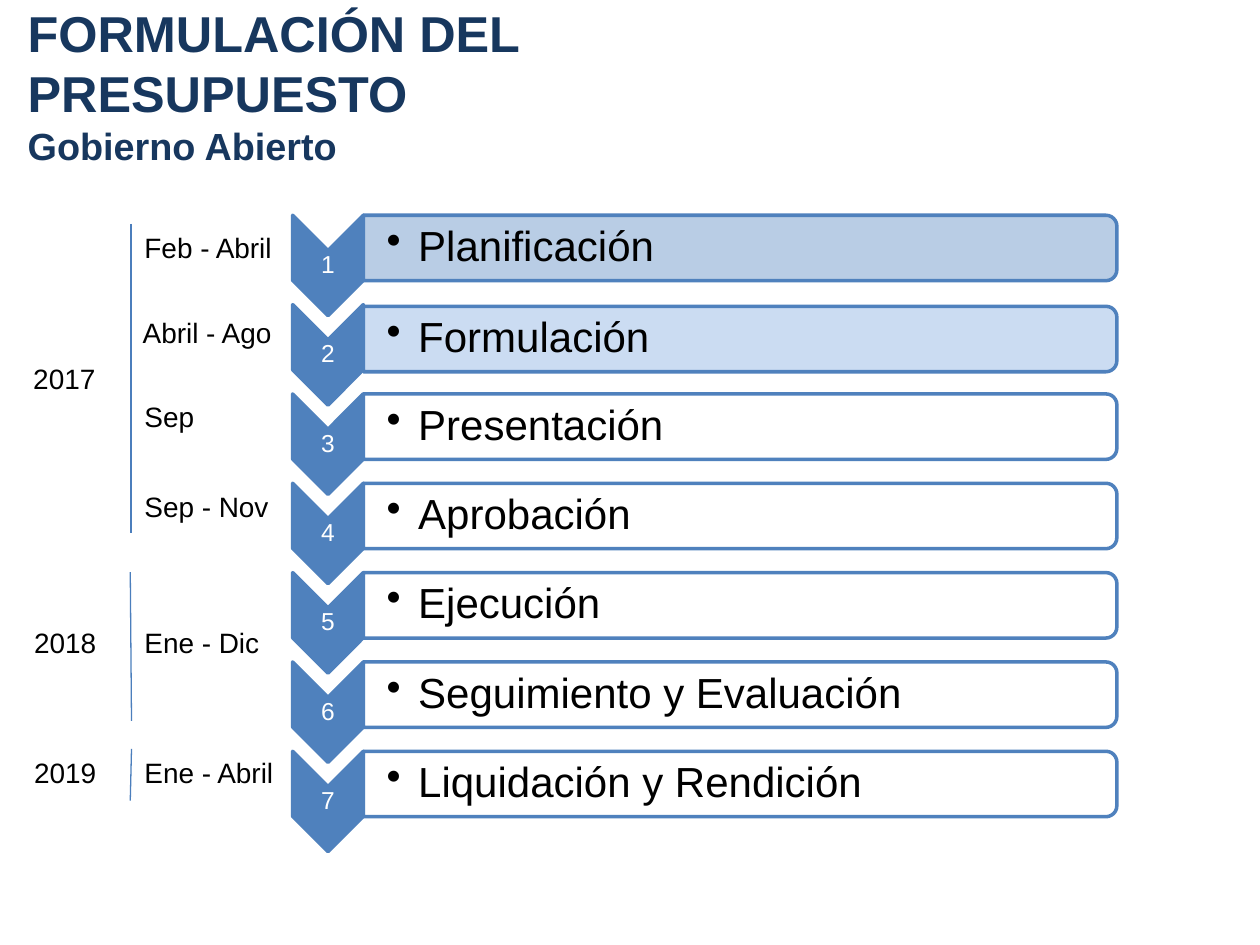
import dataclasses

import pptx
import pptx.dml.color
import pptx.enum.shapes
import pptx.enum.text
import pptx.oxml.ns
import pptx.util
from lxml import etree

Pt = pptx.util.Pt
Rgb = pptx.dml.color.RGBColor.from_string
Kind = pptx.enum.shapes.MSO_SHAPE
Align = pptx.enum.text.PP_ALIGN
Mid = pptx.enum.text.MSO_ANCHOR.MIDDLE
Fit = pptx.enum.text.MSO_AUTO_SIZE
qn = pptx.oxml.ns.qn


@dataclasses.dataclass(frozen=True)
class Theme:
    """Colours and type sizes of the slide."""
    font: str = "Arial"
    navy: str = "17375E"
    blue: str = "4F81BD"
    rule: str = "4B7EBC"
    plan: str = "B9CDE5"
    form: str = "C6D9F1"
    white: str = "FFFFFF"
    black: str = "000000"
    head: float = 28.8
    sub: float = 21.6
    step: float = 24
    label: float = 16
    mark: float = 14


T = Theme()

STEPS = [
    ("Planificación", T.plan, 100, 0),
    ("Formulación", T.form, 90, 1),
    ("Presentación", T.white, 90, 0),
    ("Aprobación", T.white, 90, 0),
    ("Ejecución", T.white, 90, 0),
    ("Seguimiento y Evaluación", T.white, 90, 0),
    ("Liquidación y Rendición", T.white, 90, 0),
]

YEARS = [
    ("2017", (3, 128, 169, 176.5), 75, 0,
     [("Feb - Abril", 0, 0), ("Abril - Ago", -1, 49), ("Sep", 0, 97), ("Sep - Nov", 0, 148)]),
    ("2018", (3.5, 327, 168.5, 85), 27, 0.7, [("Ene - Dic", 0, 27)]),
    ("2019", (3.5, 428, 168.5, 29.5), 0, -0.7, [("Ene - Abril", 0, 0)]),
]


def put(obj, **fmt):
    """Set each format value on the object."""
    for key, val in fmt.items():
        setattr(obj, key, val)


def style(font, size, ink, bold=False):
    """Give a font its face, size and colour."""
    put(font, name=T.font, size=Pt(size), bold=bold)
    font.color.rgb = Rgb(ink)


def write(slide, box, text, size, ink, pads=None, bullet=False, **fmt):
    """Place one paragraph in a text box."""
    frame = slide.shapes.add_textbox(*map(Pt, box)).text_frame
    frame.word_wrap = True
    if pads:
        left, rest = pads
        put(frame, vertical_anchor=Mid, auto_size=Fit.NONE, margin_left=Pt(left),
            margin_top=Pt(rest), margin_right=Pt(rest), margin_bottom=Pt(rest))
    para = frame.paragraphs[0]
    para.text = text
    put(para, **fmt)
    if bullet:
        props = para._p.get_or_add_pPr()
        put_attr = {"marL": Pt(18), "indent": Pt(-18)}
        for key, val in put_attr.items():
            props.set(key, str(val))
        etree.SubElement(props, qn("a:buChar"), char="•")
    style(para.runs[0].font, size, ink)


def turn(slide, kind, box, fill, alpha=100):
    """Draw a preset turned a quarter so that it covers the box."""
    x, y, w, h = box
    shape = slide.shapes.add_shape(
        kind, Pt(x + (w - h) / 2), Pt(y + (h - w) / 2), Pt(h), Pt(w))
    shape.rotation = 90
    shape.shadow.inherit = False
    shape.fill.solid()
    shape.fill.fore_color.rgb = Rgb(fill)
    if alpha < 100:
        tone = shape._element.spPr.find(qn("a:solidFill"))[0]
        etree.SubElement(tone, qn("a:alpha"), val=str(alpha * 1000))
    shape.line.color.rgb = Rgb(T.blue)
    shape.line.width = Pt(2)


def title(slide, box):
    """Fill the title placeholder with heading and subheading."""
    shape = slide.shapes.title
    x, y, w, h = map(Pt, box)
    put(shape, left=x, top=y, width=w, height=h)
    put(shape.text_frame, word_wrap=True, vertical_anchor=Mid, auto_size=Fit.NONE)
    para = shape.text_frame.paragraphs[0]
    para.alignment = Align.LEFT
    run = para.add_run()
    run.text = "FORMULACIÓN DEL PRESUPUESTO"
    style(run.font, T.head, T.navy, True)
    para.add_line_break()
    run = para.add_run()
    run.text = "Gobierno Abierto"
    style(run.font, T.sub, T.navy, True)


def steps(slide, box):
    """Stack the numbered steps down the box."""
    x, y, w, h = box
    wide, tall, bar = 40.4, 57.4, 37.4
    pitch = (h - tall) / (len(STEPS) - 1)
    for i, (name, fill, alpha, shift) in enumerate(STEPS):
        top = y + i * pitch
        turn(slide, Kind.CHEVRON, (x, top, wide, tall), T.blue)
        write(slide, (x, top + 20, wide, 17.4), str(i + 1), T.mark, T.white,
              pads=(0.7, 0.7), alignment=Align.CENTER, line_spacing=0.9)
        row = (x + wide, top + shift, w - wide, bar)
        turn(slide, Kind.ROUND_2_SAME_RECTANGLE, row, fill, alpha)
        write(slide, (x + wide, top + shift + 1.8, w - wide - 2, bar - 3.6), name,
              T.step, T.black, pads=(13.4, 1.2), bullet=True, line_spacing=0.9)


def year(slide, box, name, drop, lean, months):
    """Place a year, its rule and its months in the box."""
    x, y, w, h = box
    edge, tall = x + w - 96.5, 26.6
    for text, dx, dy in months:
        write(slide, (edge + dx, y + dy, 96.5, tall), text, T.label, T.black)
    mid = edge - 0.7
    line = slide.shapes.add_connector(
        pptx.enum.shapes.MSO_CONNECTOR.STRAIGHT,
        Pt(mid - lean / 2), Pt(y), Pt(mid + lean / 2), Pt(y + h))
    line.line.color.rgb = Rgb(T.rule)
    line.line.width = Pt(0.75)
    etree.SubElement(line._element.spPr, qn("a:effectLst"))
    write(slide, (x, y + drop, 67.5, tall), name, T.label, T.black,
          alignment=Align.CENTER)


def main():
    """Build the slide and save it."""
    deck = pptx.Presentation()
    put(deck, slide_width=Pt(720), slide_height=Pt(540))
    slide = deck.slides.add_slide(deck.slide_layouts[5])
    title(slide, (8.6, 3.6, 385.2, 90))
    steps(slide, (167.2, 123, 471, 363.7))
    for name, box, drop, lean, months in YEARS:
        year(slide, box, name, drop, lean, months)
    deck.save("out.pptx")


if __name__ == "__main__":
    main()
